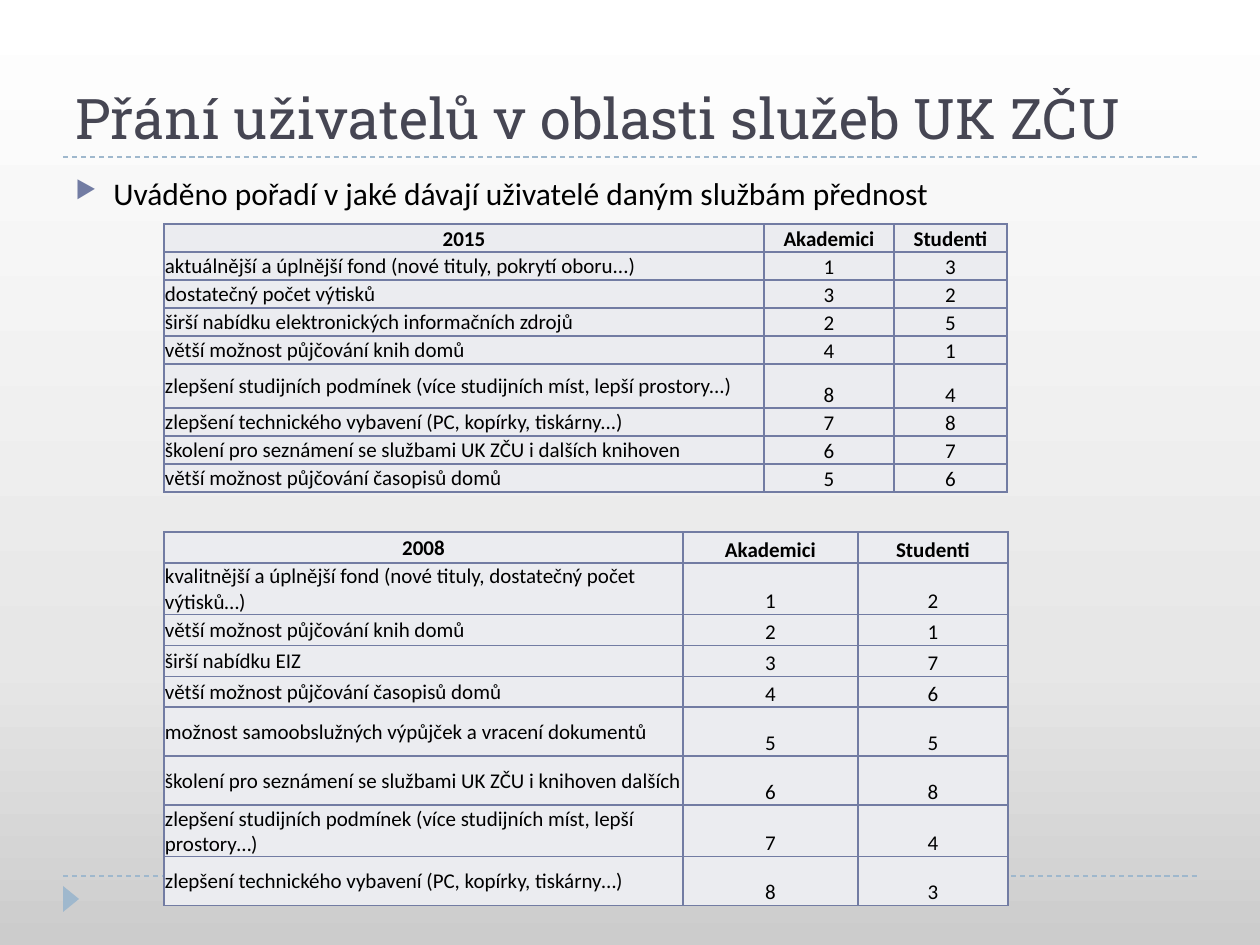
"""Build a slide with two tables ranking the library services users wish for."""
from copy import deepcopy

from lxml import etree
from pptx import Presentation, util as u
from pptx.dml.color import RGBColor
from pptx.enum import dml, shapes, text
from pptx.oxml.ns import qn

COLORS = {"title": "464653", "text": "000000", "accent": "727CA3",
          "rule": "9FB8CD", "cell": "EBECF0"}
BACKGROUND = [(0, "CCCCCC"), (0.3, "E7E7E7"), (1, "FFFFFF")]
TITLE = "Přání uživatelů v oblasti služeb UK ZČU"
INTRO = "Uváděno pořadí v jaké dávají uživatelé daným službám přednost"
RULES_Y = [876, 157]
TABLE_LEFT = 164
MIDDLE, BOTTOM = text.MSO_ANCHOR.MIDDLE, text.MSO_ANCHOR.BOTTOM
TABLES = [
    {"top": 224, "cols": [600, 130, 113], "head_anchor": BOTTOM,
     "heights": [28, 28, 28, 28, 28, 44, 28, 28, 28],
     "rows": [
         ("2015", "Akademici", "Studenti"),
         ("aktuálnější a úplnější fond (nové tituly, pokrytí oboru...)", 1, 3),
         ("dostatečný počet výtisků", 3, 2),
         ("širší nabídku elektronických informačních zdrojů", 2, 5),
         ("větší možnost půjčování knih domů", 4, 1),
         ("zlepšení studijních podmínek (více studijních míst, lepší prostory...)", 8, 4),
         ("zlepšení technického vybavení (PC, kopírky, tiskárny...)", 7, 8),
         ("školení pro seznámení se službami UK ZČU i dalších knihoven", 6, 7),
         ("větší možnost půjčování časopisů domů", 5, 6)]},
    {"top": 532, "cols": [519, 175, 150], "head_anchor": MIDDLE,
     "heights": [31, 49, 31, 31, 31, 49, 49, 49, 49],
     "rows": [
         ("2008", "Akademici", "Studenti"),
         ("kvalitnější a úplnější fond (nové tituly, dostatečný počet výtisků…)", 1, 2),
         ("větší možnost půjčování knih domů", 2, 1),
         ("širší nabídku EIZ", 3, 7),
         ("větší možnost půjčování časopisů domů", 4, 6),
         ("možnost samoobslužných výpůjček a vracení dokumentů", 5, 5),
         ("školení pro seznámení se službami UK ZČU i knihoven dalších", 6, 8),
         ("zlepšení studijních podmínek (více studijních míst, lepší prostory…)", 7, 4),
         ("zlepšení technického vybavení (PC, kopírky, tiskárny…)", 8, 3)]},
]


def px(n):
    return u.Emu(round(n * 914400 / 126))


def rgb(name):
    return RGBColor.from_string(COLORS[name])


def write(tf, content, size, font="Calibri", color="text", bold=False):
    tf.text = str(content)
    tf.word_wrap = True
    p = tf.paragraphs[0]
    f = p.runs[0].font
    f.name, f.size, f.bold = font, u.Pt(size), bold
    f.color.rgb = rgb(color)
    return p


def add_background(s):
    fill = s.background.fill
    fill.gradient()
    fill.gradient_angle = 90
    first = fill.gradient_stops[0]._gs
    first.addnext(deepcopy(first))
    for stop, (position, color) in zip(fill.gradient_stops, BACKGROUND):
        stop.position = position
        stop.color.rgb = RGBColor.from_string(color)


def add_rule(s, y):
    line = s.shapes.add_connector(shapes.MSO_CONNECTOR.STRAIGHT,
                                  px(63), px(y), px(1197), px(y))
    line.line.color.rgb = rgb("rule")
    line.line.width = u.Pt(0.75)
    line.line.dash_style = dml.MSO_LINE.DASH
    etree.SubElement(line._element.spPr, qn("a:effectLst"))


def add_marker(s):
    sp = s.shapes.add_shape(shapes.MSO_SHAPE.ISOSCELES_TRIANGLE,
                            px(58), px(891), px(26), px(16))
    sp.rotation = 90
    sp.shadow.inherit = False
    sp.fill.solid()
    sp.fill.fore_color.rgb = rgb("rule")
    sp.line.fill.background()


def add_bullet(p):
    p.space_before = u.Pt(6)
    pPr = p._p.get_or_add_pPr()
    pPr.set("marL", str(px(38)))
    pPr.set("indent", str(-px(38)))
    color = etree.SubElement(pPr, qn("a:buClr"))
    etree.SubElement(color, qn("a:srgbClr"), val=COLORS["accent"])
    etree.SubElement(pPr, qn("a:buSzPct"), val="76000")
    etree.SubElement(pPr, qn("a:buChar"), char="▶")


def add_borders(cell):
    tcPr = cell._tc.get_or_add_tcPr()
    for side in ("lnL", "lnR", "lnT", "lnB"):
        ln = etree.SubElement(tcPr, qn(f"a:{side}"), w=str(u.Pt(1)))
        fill = etree.SubElement(ln, qn("a:solidFill"))
        etree.SubElement(fill, qn("a:srgbClr"), val=COLORS["accent"])


def add_ranking(s, top, cols, head_anchor, heights, rows):
    table = s.shapes.add_table(len(rows), len(cols), px(TABLE_LEFT), px(top),
                               px(sum(cols)), px(sum(heights))).table
    for column, width in zip(table.columns, cols):
        column.width = px(width)
    for i, (row, height) in enumerate(zip(rows, heights)):
        table.rows[i].height = px(height)
        for j, value in enumerate(row):
            cell = table.cell(i, j)
            add_borders(cell)
            cell.fill.solid()
            cell.fill.fore_color.rgb = rgb("cell")
            cell.margin_left = cell.margin_right = cell.margin_top = px(1)
            cell.margin_bottom = 0
            label_anchor = MIDDLE if i else head_anchor
            cell.vertical_anchor = BOTTOM if j else label_anchor
            p = write(cell.text_frame, value, 12, bold=i == 0)
            centred = i == 0 or j > 0
            p.alignment = text.PP_ALIGN.CENTER if centred else text.PP_ALIGN.LEFT


def main():
    prs = Presentation()
    prs.slide_width, prs.slide_height = px(1260), px(945)
    s = prs.slides.add_slide(prs.slide_layouts[6])
    add_background(s)
    for y in RULES_Y:
        add_rule(s, y)
    add_marker(s)
    tf = s.shapes.add_textbox(px(63), px(21), px(1134), px(136)).text_frame
    tf.vertical_anchor = BOTTOM
    write(tf, TITLE, 32, "Roboto Slab", "title")
    tf = s.shapes.add_textbox(px(63), px(168), px(1134), px(680)).text_frame
    add_bullet(write(tf, INTRO, 18))
    for ranking in TABLES:
        add_ranking(s, **ranking)
    prs.save("out.pptx")


if __name__ == "__main__":
    main()
